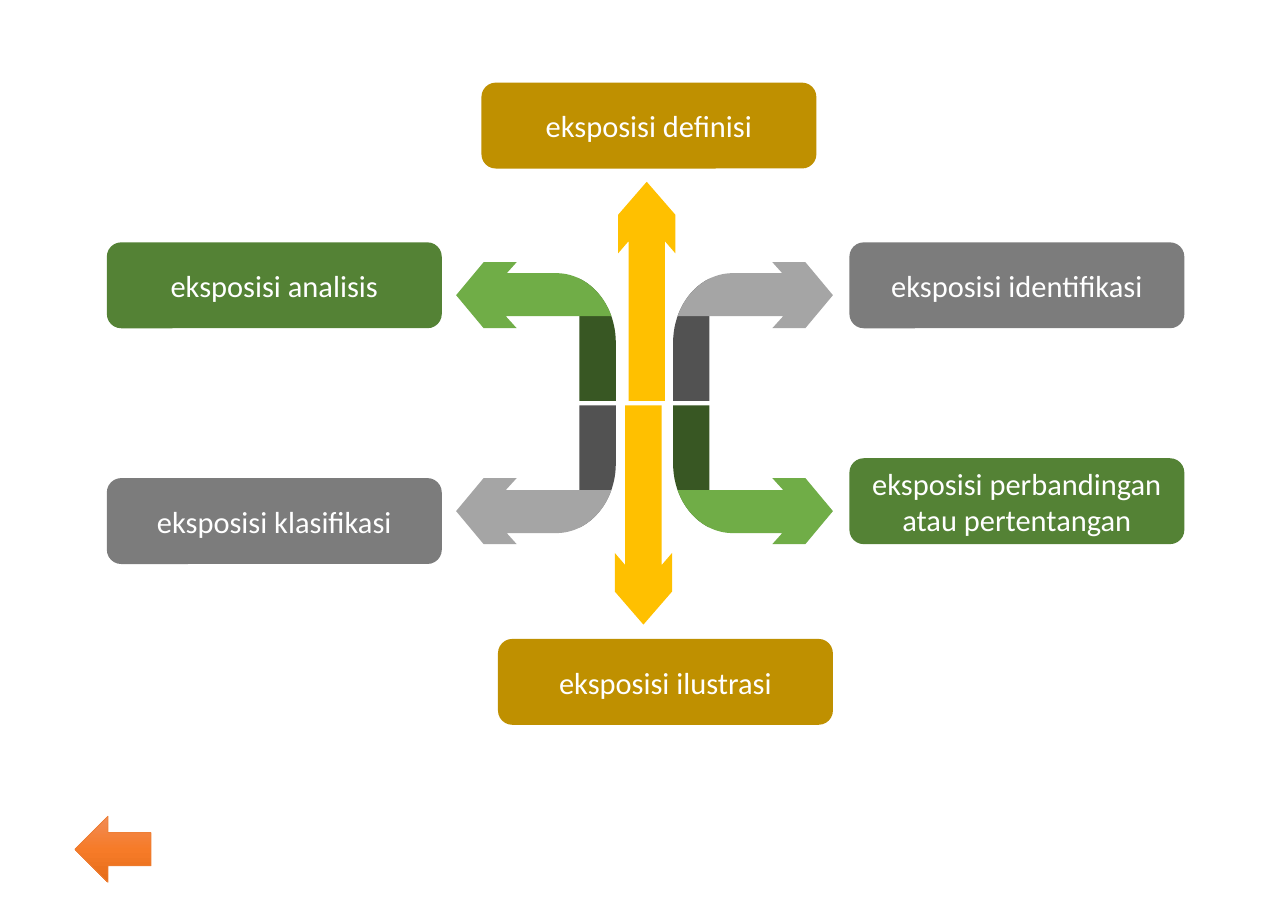
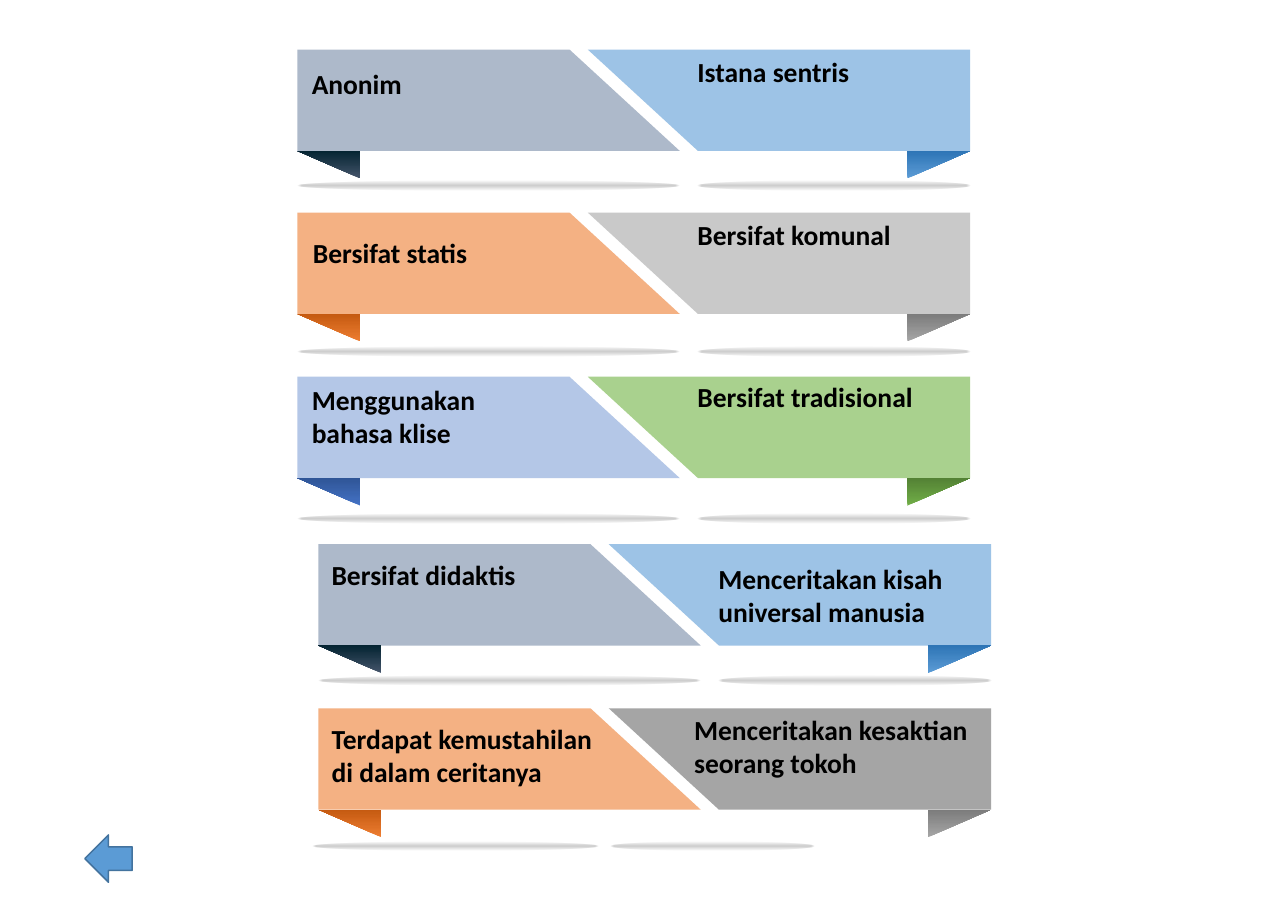
from math import asin, acos, cos, sin, pi
from pptx import Presentation
from pptx.dml.color import RGBColor as RGB
from pptx.enum.shapes import MSO_SHAPE as Kind
from pptx.enum.text import MSO_ANCHOR as Anchor, PP_ALIGN as Align
from pptx.oxml import parse_xml
from pptx.oxml.ns import nsdecls, qn
from pptx.util import Inches, Pt


class Theme:
    size = (11.69, 8.27)
    font = "Calibri"
    label = 19.9
    body = 18
    white, black = "FFFFFF", "000000"
    gold, amber = "FFC000", "BF9000"
    green = dict(arm="70AD47", stem="385723", box="548235")
    gray = dict(arm="A5A5A5", stem="525252", box="7C7C7C")
    back = [("F18C57", 0, 100), ("F67B28", 50, 100), ("E56C19", 100, 100)]
    rim = "ED7D31"
    blue, edge = "5B9BD5", "43739E"
    navy = ("ADB9CA", "44546A", "042432")
    sky = ("9DC3E6", "5B9BD5", "2E75B6")
    rust = ("F4B183", "ED7D31", "C55A11")
    ash = ("C9C9C9", "A5A5A5", "7C7C7C")
    slate = ("A5A5A5", "A5A5A5", "7C7C7C")
    royal = ("B4C7E7", "4472C4", "2F5597")
    leaf = ("A9D18E", "70AD47", "548235")


HUB = (5.85, 3.66)
BOX = (3.04, 0.78)
LABELS = [
    ("eksposisi definisi", 4.37, 0.75, Theme.amber),
    ("eksposisi ilustrasi", 4.52, 5.8, Theme.amber),
    ("eksposisi perbandingan atau pertentangan", 7.71, 4.16, Theme.green["box"]),
    ("eksposisi klasifikasi", 0.97, 4.34, Theme.gray["box"]),
    ("eksposisi identifikasi", 7.71, 2.2, Theme.gray["box"]),
    ("eksposisi analisis", 0.97, 2.2, Theme.green["box"]),
]
TURNS = [(-1, 1, Theme.gray), (1, 1, Theme.green),
         (1, -1, Theme.gray), (-1, -1, Theme.green)]
SHAFTS = [(5.84, 1), (5.87, -1)]

BAND, SLANT, RIGHT = (3.47, 0.92), 1.0, 2.635
FOLD = (0.57, 0.25)
WIDE = ((0, 3.47), (3.63, 2.48), 0.09)
SHORT = ((-0.05, 2.59), (2.65, 1.85), 0.08)
ROWS = [
    (2.7, 0.45, 1.64, WIDE,
     ("Anonim", 0.13, 0.56, 2.36, 1, Theme.navy),
     ("Istana sentris", 3.63, 0.45, 2.36, 1, Theme.sky)),
    (2.7, 1.93, 3.15, WIDE,
     ("Bersifat statis", 0.14, 2.09, 2.36, 1, Theme.rust),
     ("Bersifat komunal", 3.63, 1.93, 2.36, 1, Theme.ash)),
    (2.7, 3.42, 4.66, WIDE,
     ("Menggunakan bahasa klise", 0.13, 3.43, 2.36, 2, Theme.royal),
     ("Bersifat tradisional", 3.63, 3.4, 2.36, 1, Theme.leaf)),
    (2.89, 4.94, 6.13, WIDE,
     ("Bersifat didaktis", 0.12, 5.02, 2.36, 1, Theme.navy),
     ("Menceritakan kisah universal manusia", 3.63, 5.05, 2.36, 2, Theme.sky)),
    (2.89, 6.43, 7.64, SHORT,
     ("Terdapat kemustahilan di dalam ceritanya", 0.12, 6.5, 2.59, 2, Theme.rust),
     ("Menceritakan kesaktian seorang tokoh", 3.41, 6.42, 2.84, 2, Theme.slate)),
]
GLOW = [(Theme.black, 0, 20), (Theme.black, 100, 0)]


def blend(form, stops, round_=False):
    marks = "".join(
        f'<a:gs pos="{pos * 1000}"><a:srgbClr val="{tone}">'
        f'<a:alpha val="{alpha * 1000}"/></a:srgbClr></a:gs>'
        for tone, pos, alpha in stops)
    way = ('<a:path path="shape"><a:fillToRect l="50000" t="50000" r="50000" '
           'b="50000"/></a:path>' if round_ else '<a:lin ang="5400000" scaled="0"/>')
    form.fill.background()
    props = form._element.spPr
    props.replace(props.find(qn("a:noFill")), parse_xml(
        f'<a:gradFill {nsdecls("a")} rotWithShape="1"><a:gsLst>{marks}</a:gsLst>'
        f'{way}</a:gradFill>'))


def paint(form, fill, line=None, round_=False):
    form.shadow.inherit = False
    if isinstance(fill, str):
        form.fill.solid()
        form.fill.fore_color.rgb = RGB.from_string(fill)
    else:
        blend(form, fill, round_)
    if line:
        form.line.color.rgb = RGB.from_string(line[0])
        form.line.width = Pt(line[1])
    else:
        form.line.fill.background()
    return form


def place(slide, kind, box, fill, **more):
    return paint(slide.shapes.add_shape(kind, *map(Inches, box)), fill, **more)


def trace(slide, spots, fill):
    first, *rest = [(Inches(x), Inches(y)) for x, y in spots]
    pen = slide.shapes.build_freeform(*first, scale=1.0)
    pen.add_line_segments(rest, close=True)
    return paint(pen.convert_to_shape(), fill)


def write(form, text, size, tone, bold=False, align=Align.LEFT):
    frame = form.text_frame
    frame.word_wrap = True
    frame.vertical_anchor = Anchor.MIDDLE
    para = frame.paragraphs[0]
    para.text = text
    para.alignment = align
    font = para.font
    font.name, font.size, font.bold = Theme.font, Pt(size), bold
    font.color.rgb = RGB.from_string(tone)
    return frame


def curve(start, end, steps=16):
    turns = [start + (end - start) * i / steps for i in range(steps + 1)]
    return [(0.8 - 0.54 * cos(t), 0.55 + 0.63 * sin(t)) for t in turns]


def draw_types(slide):
    stem = [(0.59, 0.02), (0.26, 0.02)] + curve(0, acos(0.21 / 0.54))
    arm = curve(asin(0.24 / 0.63), pi / 2) + [
        (1.25, 1.18), (1.16, 1.28), (1.46, 1.28), (1.71, 0.98),
        (1.46, 0.68), (1.16, 0.68), (1.26, 0.79)]
    half = [(0.165, 0.02), (0.165, 1.47), (0.26, 1.36), (0.26, 1.71), (0, 2.01)]
    shaft = half + [(-x, y) for x, y in half[-2::-1]]

    def flip(spots, mid, across, down):
        return [(mid + across * x, HUB[1] + down * y) for x, y in spots]

    for across, down, tones in TURNS:
        trace(slide, flip(stem, HUB[0], across, down), tones["stem"])
        trace(slide, flip(arm, HUB[0], across, down), tones["arm"])
    for mid, down in SHAFTS:
        trace(slide, flip(shaft, mid, 1, down), Theme.gold)
    for text, x, y, fill in LABELS:
        box = place(slide, Kind.ROUNDED_RECTANGLE, (x, y, *BOX), fill)
        write(box, text, Theme.label, Theme.white, align=Align.CENTER)
    place(slide, Kind.LEFT_ARROW, (0.68, 7.41, 0.69, 0.6), Theme.back,
          line=(Theme.rim, 0.5))


def draw_traits(slide):
    wide, tall = BAND
    for left, top, low, (*glows, thick), *sides in ROWS:
        base = top + tall
        far = left + RIGHT
        bands = [
            [(left, top), (left + wide - SLANT, top), (left + wide, base), (left, base)],
            [(far, top), (far + wide, top), (far + wide, base), (far + SLANT, base)]]
        folds = [left, far + wide - FOLD[0]]
        for side, (text, shift, high, span, lines, tones) in enumerate(sides):
            fill, light, dark = tones
            trace(slide, bands[side], fill)
            fold = place(slide, Kind.RIGHT_TRIANGLE, (folds[side], base, *FOLD),
                         [(light, 0, 100), (dark, 100, 100)])
            turn = fold._element.spPr.xfrm
            turn.set("flipV", "1")
            if side == 0:
                turn.set("flipH", "1")
            dx, length = glows[side]
            place(slide, Kind.OVAL, (left + dx, low, length, thick), GLOW, round_=True)
            spot = (left + shift, high, span, 0.1 + 0.3 * lines)
            note = slide.shapes.add_textbox(*map(Inches, spot))
            write(note, text, Theme.body, Theme.black, bold=True).margin_left = 0
    place(slide, Kind.LEFT_ARROW, (0.77, 7.58, 0.43, 0.43), Theme.blue,
          line=(Theme.edge, 1))


def main():
    deck = Presentation()
    deck.slide_width, deck.slide_height = map(Inches, Theme.size)
    for draw in (draw_types, draw_traits):
        draw(deck.slides.add_slide(deck.slide_layouts[6]))
    deck.save("out.pptx")


if __name__ == "__main__":
    main()
